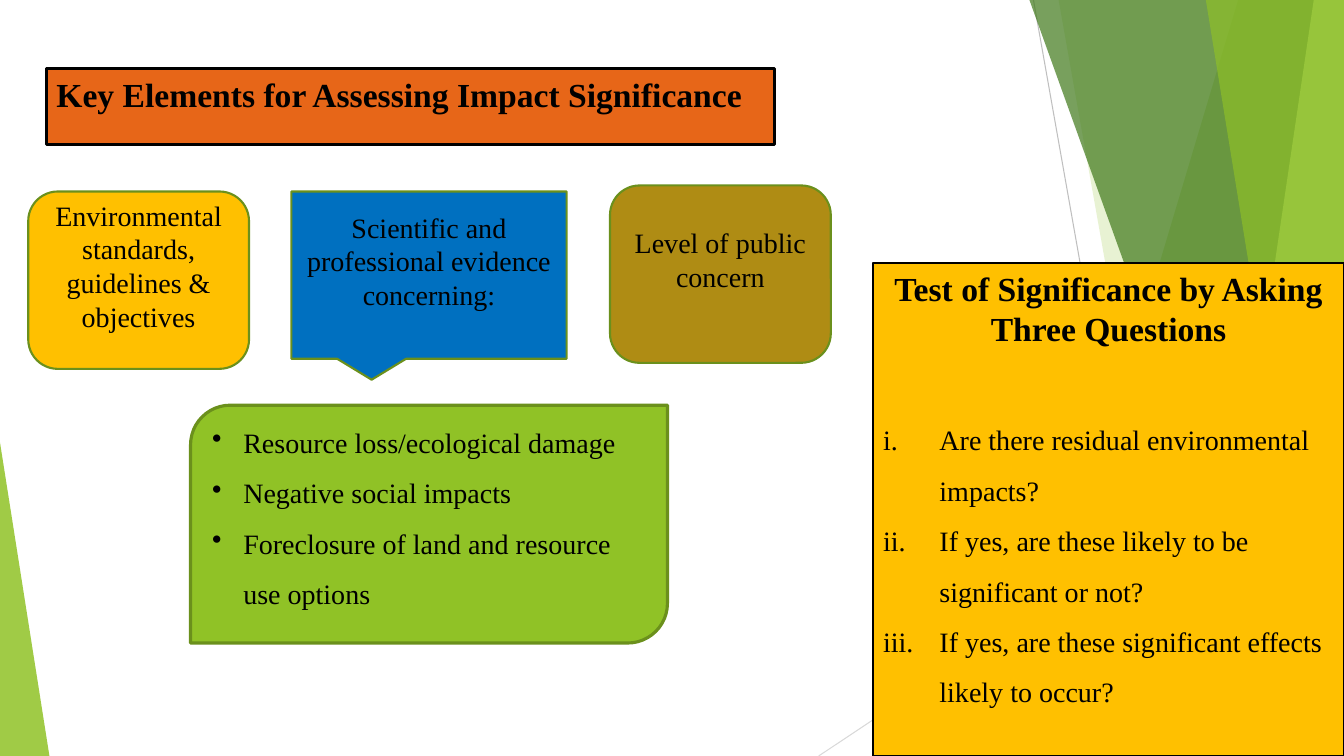
from lxml import etree
from pptx import Presentation
from pptx import util as u
from pptx.dml.color import RGBColor
from pptx.enum import shapes, text
from pptx.oxml import ns

BLACK = RGBColor(0, 0, 0)
LEAF = RGBColor(0x90, 0xC2, 0x26)
GRASS = RGBColor(0x54, 0xA0, 0x21)
FOREST = RGBColor(0x3F, 0x78, 0x19)
LIME = RGBColor(0xC0, 0xE4, 0x74)
OLIVE = RGBColor(0x6B, 0x90, 0x1C)
ORANGE = RGBColor(0xE7, 0x66, 0x18)
AMBER = RGBColor(0xFF, 0xC0, 0x00)
BRONZE = RGBColor(0xAF, 0x8C, 0x14)
BLUE = RGBColor(0x00, 0x70, 0xC0)
GREY = RGBColor(0xBF, 0xBF, 0xBF)
PALE_GREY = RGBColor(0xD9, 0xD9, 0xD9)

WIDTH, HEIGHT = 13.33, 7.5
Preset = shapes.MSO_SHAPE
Align = text.PP_ALIGN
Anchor = text.MSO_ANCHOR

deck = Presentation()
deck.slide_width, deck.slide_height = u.Inches(WIDTH), u.Inches(HEIGHT)
slide = deck.slides.add_slide(deck.slide_layouts[5])


def dress(box, fill, border, weight, anchor, spare=0):
    box.fill.solid()
    box.fill.fore_color.rgb = fill
    box.line.color.rgb = border
    box.line.width = u.Pt(weight)
    frame = box.text_frame
    frame.word_wrap = True
    frame.auto_size = text.MSO_AUTO_SIZE.NONE
    frame.vertical_anchor = anchor
    frame.margin_bottom = u.Inches(0.05 + spare)
    return frame


def write(frame, lines, size, align, bold=False, indent=0, bullet=None, **marks):
    for line in lines:
        paragraph = frame.paragraphs[0] if not frame.text else frame.add_paragraph()
        paragraph.text = line
        paragraph.alignment = align
        paragraph.font.name = "Times New Roman"
        paragraph.font.size = u.Pt(size)
        paragraph.font.bold = bold
        paragraph.font.color.rgb = BLACK
        if bullet:
            paragraph.line_spacing = 1.5
            props = paragraph._p.get_or_add_pPr()
            props.set("marL", str(u.Inches(indent)))
            props.set("indent", str(-u.Inches(indent)))
            mark = etree.Element(ns.qn(bullet), **marks)
            props.find(ns.qn("a:defRPr")).addprevious(mark)


for start, end, colour in [
    ((10.25, 0), (11.58, HEIGHT), GREY),
    ((WIDTH, 4.03), (8.12, HEIGHT), PALE_GREY),
]:
    ray = slide.shapes.add_connector(
        shapes.MSO_CONNECTOR.STRAIGHT, *[u.Inches(n) for n in start + end])
    ray.line.color.rgb = colour
    ray.line.width = u.Pt(0.75)
    etree.SubElement(ray._element.spPr, ns.qn("a:effectLst"))

facets = [
    (12.28, 10.04, 0, LEAF, 30),
    (10.5, 11.83, 0, LEAF, 20),
    (WIDTH, 9.77, 3.33, GRASS, 72),
    (10.21, 12.91, 0, FOREST, 70),
    (13.03, 11.92, 0, LIME, 70),
    (11.96, 13.18, 0, LEAF, 65),
    (WIDTH, 11.34, 3.93, LEAF, 80),
    (0, 0.49, 4.39, LEAF, 85),
]
for peak, foot, crown, colour, opacity in facets:
    if crown:
        facet = slide.shapes.add_shape(
            Preset.ISOSCELES_TRIANGLE, u.Inches(min(peak, foot)), u.Inches(crown),
            u.Inches(abs(peak - foot)), u.Inches(HEIGHT - crown))
        facet.adjustments[0] = int(peak > foot)
    else:
        outline = slide.shapes.build_freeform(u.Inches(peak), 0)
        outline.add_line_segments(
            [(u.Inches(x), u.Inches(y))
             for x, y in [(WIDTH, 0), (WIDTH, HEIGHT), (foot, HEIGHT)]])
        facet = outline.convert_to_shape()
    facet.shadow.inherit = False
    facet.line.fill.background()
    facet.fill.solid()
    facet.fill.fore_color.rgb = colour
    tint = facet.fill._xPr.find(ns.qn("a:solidFill"))[0]
    etree.SubElement(tint, ns.qn("a:alpha"), val=str(opacity * 1000))

heading = slide.shapes.title
heading.left, heading.top, heading.width, heading.height = [
    u.Inches(n) for n in (0.46, 0.68, 7.22, 0.75)]
write(dress(heading, ORANGE, BLACK, 2.25, Anchor.TOP),
      ["Key Elements for Assessing Impact Significance"], 24, Align.LEFT, bold=True)

elements = [
    (Preset.ROUNDED_RECTANGLE, (0.28, 1.9, 2.19, 1.76), AMBER, 1.5,
     ["Environmental standards, guidelines & objectives"]),
    (Preset.ROUNDED_RECTANGLE, (6.05, 1.84, 2.19, 1.76), BRONZE, 1.5,
     ["Level of public concern"]),
    (Preset.ROUND_2_DIAG_RECTANGLE, (1.89, 4.02, 4.73, 2.36), LEAF, 2.25,
     ["Resource loss/ecological damage", "Negative social impacts",
      "Foreclosure of land and resource use options"]),
    (Preset.RECTANGULAR_CALLOUT, (2.89, 1.9, 2.73, 1.66), BLUE, 1.5,
     ["Scientific and professional evidence concerning:"]),
]
for preset, place, fill, weight, lines in elements:
    element = slide.shapes.add_shape(preset, *[u.Inches(n) for n in place])
    element.shadow.inherit = False
    frame = dress(element, fill, OLIVE, weight, Anchor.MIDDLE, spare=0.29)
    if len(lines) > 1:
        write(frame, lines, 20, Align.LEFT, indent=0.31, bullet="a:buChar", char="•")
    else:
        write(frame, lines, 20, Align.CENTER)

questions = slide.shapes.add_shape(
    Preset.RECTANGLE, *[u.Inches(n) for n in (8.66, 2.61, 4.67, 4.89)])
questions.shadow.inherit = False
frame = dress(questions, AMBER, BLACK, 1.5, Anchor.TOP)
write(frame, ["Test of Significance by Asking Three Questions"], 24, Align.CENTER, bold=True)
frame.paragraphs[0].space_after = u.Pt(41)
write(frame, ["Are there residual environmental impacts?",
              "If yes, are these likely to be significant or not?",
              "If yes, are these significant effects likely to occur?"],
      20, Align.LEFT, indent=0.56, bullet="a:buAutoNum", type="romanLcPeriod")

deck.save("out.pptx")
